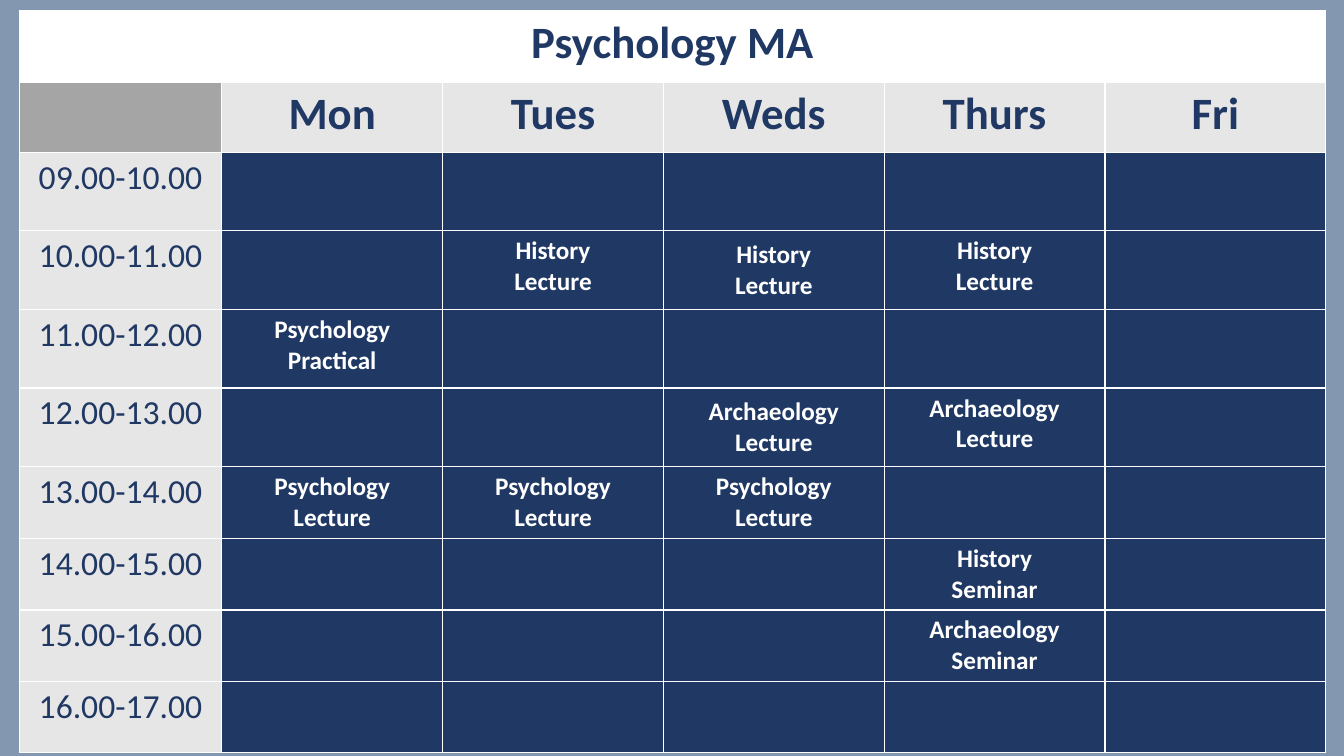
import dataclasses

import lxml.etree
import pptx
import pptx.dml.color
import pptx.enum.text
import pptx.oxml.ns
import pptx.table
import pptx.util


@dataclasses.dataclass(frozen=True)
class Theme:
    font: str = "Calibri"
    backdrop: str = "8497B0"
    navy: str = "203864"
    white: str = "FFFFFF"
    pale: str = "E7E6E6"
    gray: str = "A5A5A5"
    heading_size: int = 32
    hour_size: int = 24
    class_size: int = 18
    border: float = 1
    title_border: float = 3


@dataclasses.dataclass(frozen=True)
class CellStyle:
    fill: str
    color: str
    size: int
    bold: bool
    bottom: float = 1


@dataclasses.dataclass(frozen=True)
class Session:
    day: str
    hour: int
    subject: str
    kind: str
    middle: bool = False


THEME = Theme()
TITLE = CellStyle(THEME.white, THEME.navy, THEME.heading_size, True, THEME.title_border)
CORNER = CellStyle(THEME.gray, THEME.navy, THEME.heading_size, True)
DAY = CellStyle(THEME.pale, THEME.navy, THEME.heading_size, True)
HOUR = CellStyle(THEME.pale, THEME.navy, THEME.hour_size, False)
CLASS = CellStyle(THEME.navy, THEME.white, THEME.class_size, True)

DAYS = ["Mon", "Tues", "Weds", "Thurs", "Fri"]
HOURS = range(9, 17)
SESSIONS = [
    Session("Tues", 10, "History", "Lecture"),
    Session("Weds", 10, "History", "Lecture", middle=True),
    Session("Thurs", 10, "History", "Lecture"),
    Session("Mon", 11, "Psychology", "Practical"),
    Session("Weds", 12, "Archaeology", "Lecture", middle=True),
    Session("Thurs", 12, "Archaeology", "Lecture"),
    Session("Mon", 13, "Psychology", "Lecture"),
    Session("Tues", 13, "Psychology", "Lecture"),
    Session("Weds", 13, "Psychology", "Lecture"),
    Session("Thurs", 14, "History", "Seminar"),
    Session("Thurs", 15, "Archaeology", "Seminar"),
]
COLUMN_WIDTHS = [2.01] + [2.19] * len(DAYS)
ROW_HEIGHTS = [0.7] * 2 + [0.78] * 4 + [0.7] * 4


def rgb(value: str) -> pptx.dml.color.RGBColor:
    return pptx.dml.color.RGBColor.from_string(value)


def add_borders(cell: pptx.table._Cell, bottom: float) -> None:
    properties = cell._tc.get_or_add_tcPr()
    widths = {"L": THEME.border, "R": THEME.border, "T": THEME.border, "B": bottom}
    for side, width in widths.items():
        line = lxml.etree.SubElement(
            properties, pptx.oxml.ns.qn(f"a:ln{side}"), w=str(pptx.util.Pt(width))
        )
        fill = lxml.etree.SubElement(line, pptx.oxml.ns.qn("a:solidFill"))
        lxml.etree.SubElement(fill, pptx.oxml.ns.qn("a:srgbClr"), val=THEME.white)


def format_cell(cell: pptx.table._Cell, style: CellStyle, text: str = "") -> None:
    add_borders(cell, style.bottom)
    cell.fill.solid()
    cell.fill.fore_color.rgb = rgb(style.fill)
    if not text:
        return
    cell.text_frame.text = text
    font_format = {
        "name": THEME.font,
        "size": pptx.util.Pt(style.size),
        "bold": style.bold,
    }
    for para in cell.text_frame.paragraphs:
        para.alignment = pptx.enum.text.PP_ALIGN.CENTER
        for span in para.runs:
            for name, value in font_format.items():
                setattr(span.font, name, value)
            span.font.color.rgb = rgb(style.color)


def add_timetable(page) -> pptx.table.Table:
    frame = page.shapes.add_table(
        len(ROW_HEIGHTS),
        len(COLUMN_WIDTHS),
        pptx.util.Inches(0.19),
        pptx.util.Inches(0.11),
        pptx.util.Inches(sum(COLUMN_WIDTHS)),
        pptx.util.Inches(sum(ROW_HEIGHTS)),
    )
    table = frame.table
    for name, value in {"first_row": False, "horz_banding": False}.items():
        setattr(table, name, value)
    for column, width in zip(table.columns, COLUMN_WIDTHS):
        column.width = pptx.util.Inches(width)
    for row, height in zip(table.rows, ROW_HEIGHTS):
        row.height = pptx.util.Inches(height)
    return table


def fill_timetable(table: pptx.table.Table) -> None:
    table.cell(0, 0).merge(table.cell(0, len(DAYS)))
    for column in range(len(COLUMN_WIDTHS)):
        format_cell(table.cell(0, column), TITLE, "" if column else "Psychology MA")
    format_cell(table.cell(1, 0), CORNER)
    for column, day in enumerate(DAYS, start=1):
        format_cell(table.cell(1, column), DAY, day)

    sessions = {(session.day, session.hour): session for session in SESSIONS}
    for row, hour in enumerate(HOURS, start=2):
        format_cell(table.cell(row, 0), HOUR, f"{hour:02d}.00-{hour + 1}.00")
        for column, day in enumerate(DAYS, start=1):
            cell = table.cell(row, column)
            session = sessions.get((day, hour))
            text = f"{session.subject}\n{session.kind}" if session else ""
            format_cell(cell, CLASS, text)
            if session and session.middle:
                cell.vertical_anchor = pptx.enum.text.MSO_ANCHOR.MIDDLE


def main() -> None:
    deck = pptx.Presentation()
    deck.slide_width = pptx.util.Inches(13.33)
    deck.slide_height = pptx.util.Inches(7.5)
    page = deck.slides.add_slide(deck.slide_layouts[6])
    page.background.fill.solid()
    page.background.fill.fore_color.rgb = rgb(THEME.backdrop)
    fill_timetable(add_timetable(page))
    deck.save("out.pptx")


if __name__ == "__main__":
    main()
